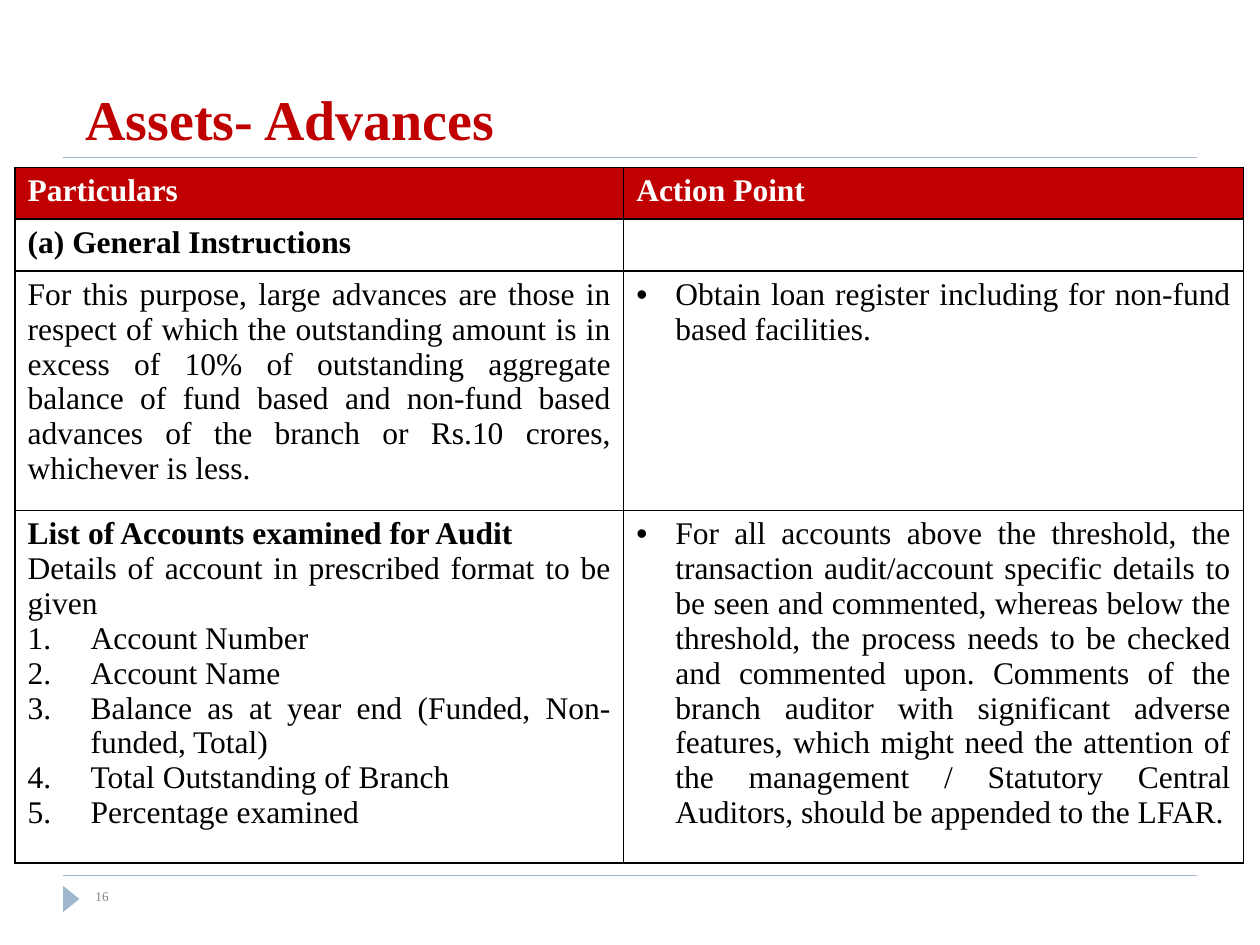
from dataclasses import dataclass

from lxml import etree
from pptx import Presentation
from pptx.dml.color import RGBColor
from pptx.enum.shapes import MSO_CONNECTOR, MSO_SHAPE
from pptx.enum.text import MSO_ANCHOR, PP_ALIGN
from pptx.oxml.ns import qn
from pptx.util import Emu, Inches, Pt

STRAIGHT = MSO_CONNECTOR.STRAIGHT
TRIANGLE = MSO_SHAPE.ISOSCELES_TRIANGLE
TOP, BOTTOM = MSO_ANCHOR.TOP, MSO_ANCHOR.BOTTOM
LEFT, JUSTIFY = PP_ALIGN.LEFT, PP_ALIGN.JUSTIFY
WIDTH, HEIGHT = Inches(10), Inches(7.5)


@dataclass(frozen=True)
class Theme:
    font: str = "Times New Roman"
    red: str = "C00000"
    blue: str = "9FB8CD"
    grey: str = "808080"
    black: str = "000000"
    white: str = "FFFFFF"
    title: float = 32
    body: float = 18
    small: float = 7.5
    rule: float = 0.75
    border: float = 1


@dataclass(frozen=True)
class Para:
    text: str
    bold: bool = False
    color: str = Theme.black
    size: float = Theme.body
    align: PP_ALIGN = JUSTIFY
    mark: str = ""


@dataclass(frozen=True)
class Box:
    """Left, top, width and height as shares of the slide."""
    x: float
    y: float
    w: float
    h: float

    def emu(self) -> tuple[Emu, ...]:
        return (Emu(int(self.x * WIDTH)), Emu(int(self.y * HEIGHT)),
                Emu(int(self.w * WIDTH)), Emu(int(self.h * HEIGHT)))


# Each kind of list mark: hanging indent in inches, tag and attributes
MARKS = {
    "bullet": (0.31, "a:buChar", {"char": "•"}),
    "number": (0.5, "a:buAutoNum", {"type": "arabicPeriod"}),
}
T = Theme()


def rgb(color: str) -> RGBColor:
    return RGBColor.from_string(color)


def add_mark(p, mark: str) -> None:
    indent, tag, attrs = MARKS[mark]
    pPr = p._p.get_or_add_pPr()
    pPr.set("marL", str(Inches(indent)))
    pPr.set("indent", str(-Inches(indent)))
    if mark == "bullet":
        etree.SubElement(pPr, qn("a:buFont"), typeface="Arial")
    etree.SubElement(pPr, qn(tag), attrs)


def write(tf, paras: list[Para]) -> None:
    for i, para in enumerate(paras):
        p = tf.paragraphs[0] if i == 0 else tf.add_paragraph()
        p.alignment = para.align
        if para.mark:
            add_mark(p, para.mark)
        r = p.add_run()
        r.text = para.text
        formats = {"name": T.font, "size": Pt(para.size), "bold": para.bold}
        for name, value in formats.items():
            setattr(r.font, name, value)
        r.font.color.rgb = rgb(para.color)


def add_text(s, box: Box, para: Para, anchor: MSO_ANCHOR) -> None:
    tf = s.shapes.add_textbox(*box.emu()).text_frame
    tf.word_wrap = True
    tf.vertical_anchor = anchor
    write(tf, [para])


def add_rule(s, box: Box) -> None:
    x, y, w, h = box.emu()
    line = s.shapes.add_connector(STRAIGHT, x, y, x + w, y + h)
    line.line.color.rgb = rgb(T.blue)
    line.line.width = Pt(T.rule)
    etree.SubElement(line._element.spPr, qn("a:effectLst"))


def add_borders(cell) -> None:
    tcPr = cell._tc.get_or_add_tcPr()
    for i, side in enumerate(("lnL", "lnR", "lnT", "lnB")):
        ln = etree.Element(qn(f"a:{side}"), w=str(Pt(T.border)))
        fill = etree.SubElement(ln, qn("a:solidFill"))
        etree.SubElement(fill, qn("a:srgbClr"), val=T.black)
        tcPr.insert(i, ln)


def add_grid(s, box: Box, cols: list[float], rows: list[float],
             content: list[list[list[Para]]]) -> None:
    table = s.shapes.add_table(len(rows), len(cols), *box.emu()).table
    table.first_row = table.horz_banding = False
    for col, share in zip(table.columns, cols):
        col.width = Emu(int(share * WIDTH))
    for row, share in zip(table.rows, rows):
        row.height = Emu(int(share * HEIGHT))
    for r, line in enumerate(content):
        for c, paras in enumerate(line):
            cell = table.cell(r, c)
            if r == 0:
                cell.fill.solid()
                cell.fill.fore_color.rgb = rgb(T.red)
            else:
                cell.fill.background()
            add_borders(cell)
            write(cell.text_frame, paras)


ACCOUNT_DETAILS = ["Account Number", "Account Name",
                   "Balance as at year end (Funded, Non-funded, Total)",
                   "Total Outstanding of Branch", "Percentage examined"]
CONTENT = [
    [[Para(head, True, T.white)] for head in ("Particulars", "Action Point")],
    [[Para("(a) General Instructions", True)], []],
    [[Para("For this purpose, large advances are those in respect of which the "
           "outstanding amount is in excess of 10% of outstanding aggregate "
           "balance of fund based and non-fund based advances of the branch or "
           "Rs.10 crores, whichever is less.")],
     [Para("Obtain loan register including for non-fund based facilities.",
           mark="bullet")]],
    [[Para("List of Accounts examined for Audit", True),
      Para("Details of account in prescribed format to be given"),
      *(Para(item, mark="number") for item in ACCOUNT_DETAILS)],
     [Para("For all accounts above the threshold, the transaction audit/account "
           "specific details to be seen and commented, whereas below the "
           "threshold, the process needs to be checked and commented upon. "
           "Comments of the branch auditor with significant adverse features, "
           "which might need the attention of the management / Statutory "
           "Central Auditors, should be appended to the LFAR.",
           mark="bullet")]],
]


def main() -> None:
    prs = Presentation()
    prs.slide_width, prs.slide_height = WIDTH, HEIGHT
    s = prs.slides.add_slide(prs.slide_layouts[6])

    # Rules above the footer and below the title
    for y in (6.95 / 7.5, 1.25 / 7.5):
        add_rule(s, Box(0.05, y, 0.9, 0))

    # Footer marker, pointing right
    sp = s.shapes.add_shape(TRIANGLE, *Box(0.046, 7.07 / 7.5, 0.021, 0.13 / 7.5).emu())
    sp.rotation = 90
    sp.shadow.inherit = False
    sp.fill.solid()
    sp.fill.fore_color.rgb = rgb(T.blue)
    sp.line.fill.background()

    # Title and page number
    add_text(s, Box(0.058, 0.17 / 7.5, 0.9, 1.08 / 7.5),
             Para("Assets- Advances", True, T.red, T.title, LEFT), BOTTOM)
    add_text(s, Box(0.066, 7 / 7.5, 0.433, 0.04),
             Para("16", False, T.grey, T.small, LEFT), TOP)

    # Table of particulars and action points
    rows = [h / 7.5 for h in (0.41, 0.41, 1.76, 2.6)]
    cols = [0.483, 0.492]
    add_grid(s, Box(0.012, 1.33 / 7.5, sum(cols), sum(rows)), cols, rows, CONTENT)

    prs.save("out.pptx")


if __name__ == "__main__":
    main()
